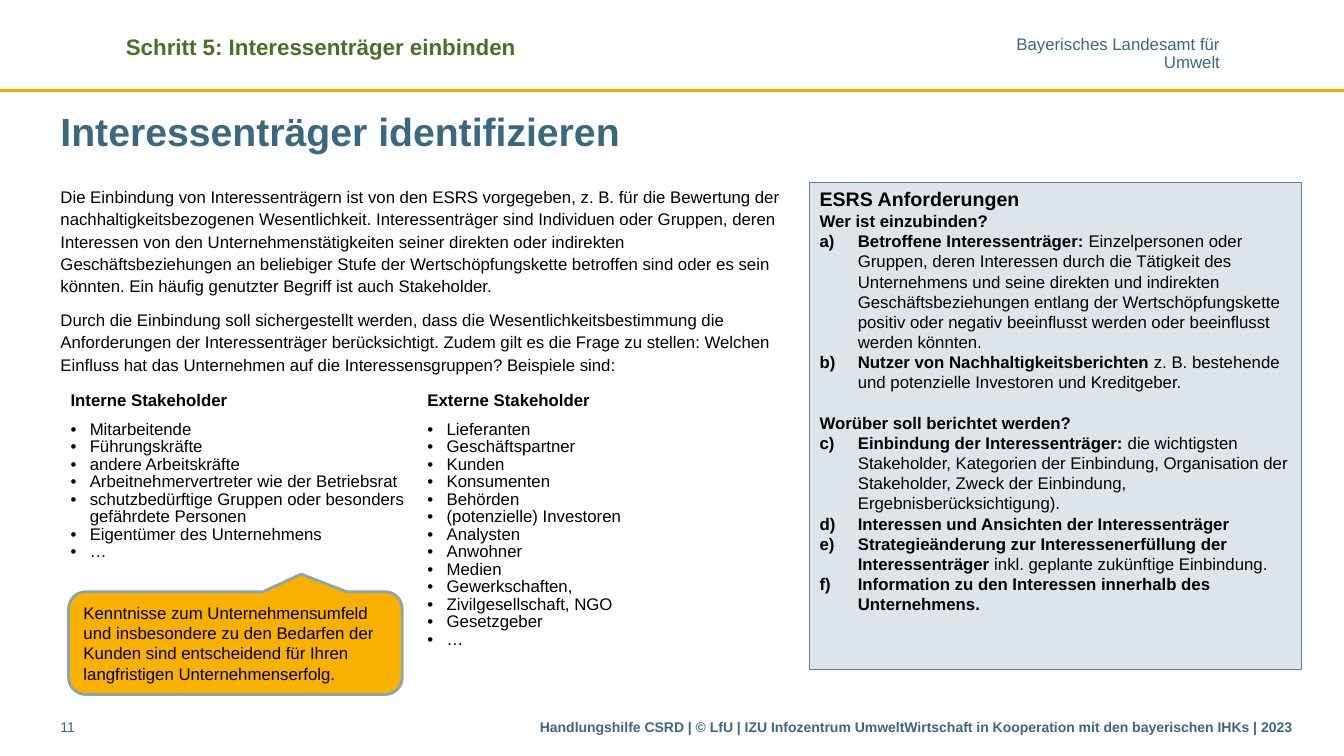
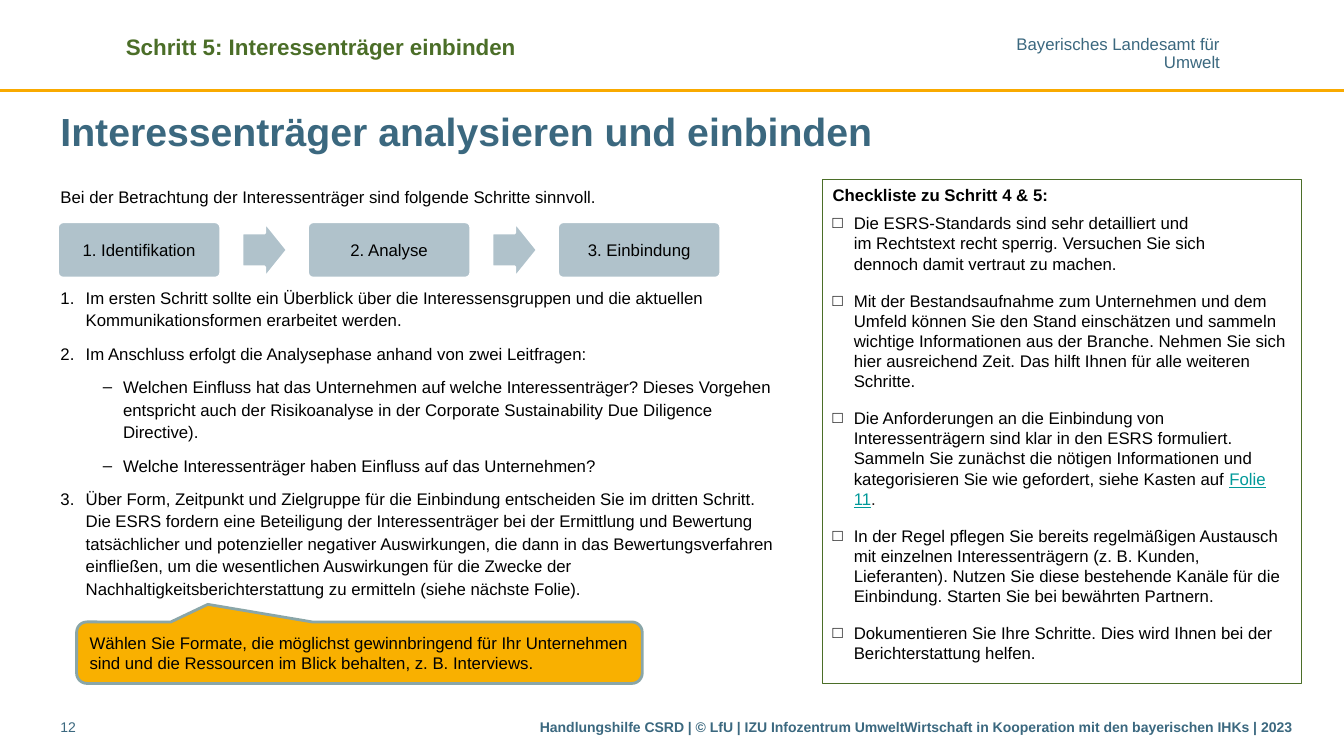
from lxml.etree import SubElement
from pptx import Presentation
from pptx.dml.color import RGBColor
from pptx.enum.shapes import MSO_CONNECTOR, MSO_SHAPE
from pptx.enum.text import MSO_ANCHOR, PP_ALIGN
from pptx.oxml.ns import qn
from pptx.util import Inches, Pt

# Shared look
FONT = "Arial"
BLACK, WHITE = "000000", "FFFFFF"
BLUE, GREEN, GOLD = "3B687F", "4B6E28", "F9AA00"
CALLOUT_FILL, CALLOUT_LINE = "F9B000", "8AA6A8"
PANEL_FILL, PANEL_LINE = "DEE5EA", "5C8395"
STEP_FILL, LINK = "B0C2CB", "009999"
SLIDE_WIDTH, SLIDE_HEIGHT = 13.33, 7.5
LEFT, RIGHT = 0.6, 12.91
FLUSH = (0, 0.05, 0, 0.05)
INSET = (0.1, 0.05, 0.1, 0.05)
BODY = {"line": Pt(16), "before": 8}

STEP_HEADING = "Schritt 5: Interessenträger einbinden"
AGENCY = ["Bayerisches Landesamt für", "Umwelt"]
FOOTER = ("Handlungshilfe CSRD | © LfU | IZU Infozentrum UmweltWirtschaft "
          "in Kooperation mit den bayerischen IHKs | 2023")

# Slide texts
INTRODUCTION = [
    "Die Einbindung von Interessenträgern ist von den ESRS vorgegeben, z. B. für die Bewertung "
    "der nachhaltigkeitsbezogenen Wesentlichkeit. Interessenträger sind Individuen oder Gruppen, "
    "deren Interessen von den Unternehmenstätigkeiten seiner direkten oder indirekten "
    "Geschäftsbeziehungen an beliebiger Stufe der Wertschöpfungskette betroffen sind oder es sein "
    "könnten. Ein häufig genutzter Begriff ist auch Stakeholder.",
    "Durch die Einbindung soll sichergestellt werden, dass die Wesentlichkeitsbestimmung die "
    "Anforderungen der Interessenträger berücksichtigt. Zudem gilt es die Frage zu stellen: "
    "Welchen Einfluss hat das Unternehmen auf die Interessensgruppen? Beispiele sind:",
]
STAKEHOLDERS = {
    "Interne Stakeholder": [
        "Mitarbeitende", "Führungskräfte", "andere Arbeitskräfte",
        "Arbeitnehmervertreter wie der Betriebsrat",
        "schutzbedürftige Gruppen oder besonders gefährdete Personen",
        "Eigentümer des Unternehmens", "…"],
    "Externe Stakeholder": [
        "Lieferanten", "Geschäftspartner", "Kunden", "Konsumenten", "Behörden",
        "(potenzielle) Investoren", "Analysten", "Anwohner", "Medien", "Gewerkschaften,",
        "Zivilgesellschaft, NGO", "Gesetzgeber", "…"],
}
# Question, number of its first answer, answers as (bold part, plain part)
REQUIREMENTS = [
    ("Wer ist einzubinden?", 1, [
        ("Betroffene Interessenträger: ",
         "Einzelpersonen oder Gruppen, deren Interessen durch die Tätigkeit des Unternehmens und "
         "seine direkten und indirekten Geschäftsbeziehungen entlang der Wertschöpfungskette "
         "positiv oder negativ beeinflusst werden oder beeinflusst werden könnten."),
        ("Nutzer von Nachhaltigkeitsberichten ",
         "z. B. bestehende und potenzielle Investoren und Kreditgeber.")]),
    ("Worüber soll berichtet werden?", 3, [
        ("Einbindung der Interessenträger: ",
         "die wichtigsten Stakeholder, Kategorien der Einbindung, Organisation der Stakeholder, "
         "Zweck der Einbindung, Ergebnisberücksichtigung)."),
        ("Interessen und Ansichten der Interessenträger", ""),
        ("Strategieänderung zur Interessenerfüllung der Interessenträger ",
         "inkl. geplante zukünftige Einbindung."),
        ("Information zu den Interessen innerhalb des Unternehmens.", "")]),
]
STEPS = ["1. Identifikation", "2. Analyse", "3. Einbindung"]
STEP_NOTES = [
    ("Im ersten Schritt sollte ein Überblick über die Interessensgruppen und die aktuellen "
     "Kommunikationsformen erarbeitet werden.", []),
    ("Im Anschluss erfolgt die Analysephase anhand von zwei Leitfragen:", [
        "Welchen Einfluss hat das Unternehmen auf welche Interessenträger? Dieses Vorgehen "
        "entspricht auch der Risikoanalyse in der Corporate Sustainability Due Diligence "
        "Directive).",
        "Welche Interessenträger haben Einfluss auf das Unternehmen?"]),
    ("Über Form, Zeitpunkt und Zielgruppe für die Einbindung entscheiden Sie im dritten Schritt. "
     "Die ESRS fordern eine Beteiligung der Interessenträger bei der Ermittlung und Bewertung "
     "tatsächlicher und potenzieller negativer Auswirkungen, die dann in das Bewertungsverfahren "
     "einfließen, um die wesentlichen Auswirkungen für die Zwecke der "
     "Nachhaltigkeitsberichterstattung zu ermitteln (siehe nächste Folie).", []),
]
CHECKLIST = [
    ["Die ESRS-Standards sind sehr detailliert und\nim Rechtstext recht sperrig. "
     "Versuchen Sie sich\ndennoch damit vertraut zu machen."],
    ["Mit der Bestandsaufnahme zum Unternehmen und dem Umfeld können Sie den Stand einschätzen "
     "und sammeln wichtige Informationen aus der Branche. Nehmen Sie sich hier ausreichend Zeit. "
     "Das hilft Ihnen für alle weiteren Schritte."],
    ["Die Anforderungen an die Einbindung von Interessenträgern sind klar in den ESRS formuliert. "
     "Sammeln Sie zunächst die nötigen Informationen und kategorisieren Sie wie gefordert, "
     "siehe Kasten auf ",
     ("Folie 11", {"color": LINK, "underline": True}), (".", {"color": "1E1713"})],
    ["In der Regel pflegen Sie bereits regelmäßigen Austausch mit einzelnen Interessenträgern "
     "(z. B. Kunden, Lieferanten). Nutzen Sie diese bestehende Kanäle für die Einbindung. "
     "Starten Sie bei bewährten Partnern."],
    ["Dokumentieren Sie Ihre Schritte. Dies wird Ihnen bei der Berichterstattung helfen."],
]


def rgb(value):
    return RGBColor.from_string(value)


# Text
def add_run(paragraph, text, size=12, color=BLACK, bold=False, underline=False):
    for index, part in enumerate(text.split("\n")):
        if index:
            paragraph.add_line_break()
        run = paragraph.add_run()
        run.text = part
        run.font.name = FONT
        run.font.size = Pt(size)
        run.font.bold = bold
        run.font.underline = underline
        run.font.color.rgb = rgb(color)


def set_bullet(paragraph, bullet, margin, hanging):
    """A bullet is a character, or a numbering scheme with its start."""
    properties = paragraph._p.get_or_add_pPr()
    properties.set("marL", str(Inches(margin)))
    properties.set("indent", str(-Inches(hanging)))
    SubElement(properties, qn("a:buFont"), typeface=FONT)
    if isinstance(bullet, tuple):
        scheme, start = bullet
        SubElement(properties, qn("a:buAutoNum"), type=scheme, startAt=str(start))
    else:
        SubElement(properties, qn("a:buChar"), char=bullet)


def add_paragraph(frame, *runs, bullet=None, margin=0.0, hanging=0.0, align=PP_ALIGN.LEFT,
                  line=None, before=0, after=0, **style):
    """Each run is a text, or a text with its own style."""
    paragraph = frame.paragraphs[0]
    is_first = not paragraph.runs
    if not is_first:
        paragraph = frame.add_paragraph()
    if bullet:
        set_bullet(paragraph, bullet, margin, hanging)
    paragraph.alignment = align
    paragraph.line_spacing = line
    paragraph.space_before = Pt(0 if is_first else before)
    paragraph.space_after = Pt(after)
    for run in runs:
        text, own_style = (run, {}) if isinstance(run, str) else run
        add_run(paragraph, text, **{**style, **own_style})


def set_frame(frame, insets, anchor):
    frame.word_wrap = True
    frame.vertical_anchor = anchor
    (frame.margin_left, frame.margin_top,
     frame.margin_right, frame.margin_bottom) = map(Inches, insets)
    return frame


def add_text(slide, box, insets=INSET, anchor=MSO_ANCHOR.TOP):
    shape = slide.shapes.add_textbox(*map(Inches, box))
    return set_frame(shape.text_frame, insets, anchor)


# Shapes
def add_shape(slide, kind, box, fill, line, width, adjustments=(), anchor=MSO_ANCHOR.MIDDLE):
    shape = slide.shapes.add_shape(kind, *map(Inches, box))
    shape.shadow.inherit = False
    for index, value in enumerate(adjustments):
        shape.adjustments[index] = value
    if fill:
        shape.fill.solid()
        shape.fill.fore_color.rgb = rgb(fill)
    else:
        shape.fill.background()
    shape.line.color.rgb = rgb(line)
    shape.line.width = Pt(width)
    return set_frame(shape.text_frame, INSET, anchor)


def add_callout(slide, box, tip, text):
    frame = add_shape(slide, MSO_SHAPE.ROUNDED_RECTANGULAR_CALLOUT, box,
                      CALLOUT_FILL, CALLOUT_LINE, 2, (*tip, 0.167))
    add_paragraph(frame, text)


def add_panel(slide, box, fill, line):
    return add_shape(slide, MSO_SHAPE.RECTANGLE, box, fill, line, 1, anchor=MSO_ANCHOR.TOP)


def add_base_slide(presentation, title, number):
    """Header band, title and footer."""
    slide = presentation.slides.add_slide(presentation.slide_layouts[6])
    rule = slide.shapes.add_connector(MSO_CONNECTOR.STRAIGHT, 0, Inches(0.9),
                                      Inches(SLIDE_WIDTH), Inches(0.9))
    rule.line.color.rgb = rgb(GOLD)
    rule.line.width = Pt(2)
    SubElement(rule._element.spPr, qn("a:effectLst"))

    agency = add_text(slide, (9.9, 0.37, 2.2, 0.34), insets=(0, 0, 0, 0))
    for name_line in AGENCY:
        add_paragraph(agency, name_line, color=BLUE, align=PP_ALIGN.RIGHT, line=0.85)
    add_paragraph(add_text(slide, (1.15, 0.28, 5.04, 0.37)), STEP_HEADING,
                  size=16, color=GREEN, bold=True)
    add_paragraph(add_text(slide, (LEFT, 1.02, RIGHT - LEFT, 0.55), FLUSH, MSO_ANCHOR.MIDDLE),
                  title, size=28, color=BLUE, bold=True)
    add_paragraph(add_text(slide, (LEFT, 7.08, 0.7, 0.31), FLUSH), str(number),
                  size=10, color=BLUE)
    add_paragraph(add_text(slide, (5.17, 7.08, RIGHT - 5.17, 0.31)), FOOTER,
                  size=10, color=BLUE, bold=True, align=PP_ALIGN.RIGHT)
    return slide


# Content parts
def add_stakeholder_table(slide):
    box = map(Inches, (LEFT, 3.83, 7.08, 3))
    table = slide.shapes.add_table(2, len(STAKEHOLDERS), *box).table
    for row, height in zip(table.rows, (0.3, 2.7)):
        row.height = Inches(height)
    for column, (heading, groups) in enumerate(STAKEHOLDERS.items()):
        heading_cell, group_cell = table.cell(0, column), table.cell(1, column)
        for cell in (heading_cell, group_cell):
            cell.fill.solid()
            cell.fill.fore_color.rgb = rgb(WHITE)
        add_paragraph(heading_cell.text_frame, heading, bold=True)
        for group in groups:
            add_paragraph(group_cell.text_frame, group, bullet="•",
                          margin=0.19, hanging=0.19, line=0.93)


def add_requirements(slide):
    frame = add_panel(slide, (8.03, 1.81, RIGHT - 8.03, 4.83), PANEL_FILL, PANEL_LINE)
    add_paragraph(frame, "ESRS Anforderungen", size=14, bold=True)
    for question, start, answers in REQUIREMENTS:
        add_paragraph(frame, question, bold=True, before=0 if start == 1 else 14.4)
        for label, detail in answers:
            runs = [(label, {"bold": True})] + ([detail] if detail else [])
            add_paragraph(frame, *runs, bullet=("alphaLcParenR", start),
                          margin=0.38, hanging=0.38)


def add_process(slide):
    top, height, pitch = 2.2, 0.56, 2.48
    for index, step in enumerate(STEPS):
        left = 0.57 + index * pitch
        frame = add_shape(slide, MSO_SHAPE.ROUNDED_RECTANGLE, (left, top, 1.62, height),
                          STEP_FILL, WHITE, 2, (0.1,))
        add_paragraph(frame, step, align=PP_ALIGN.CENTER)
        if index < len(STEPS) - 1:
            add_shape(slide, MSO_SHAPE.RIGHT_ARROW, (left + 1.83, top, 0.45, height),
                      STEP_FILL, WHITE, 2, (0.6, 0.5))


def add_step_notes(slide):
    frame = add_text(slide, (LEFT, 1.78, 7.09, 4.3), FLUSH)
    add_paragraph(frame, "Bei der Betrachtung der Interessenträger sind folgende Schritte sinnvoll.",
                  **BODY)
    for number, (note, questions) in enumerate(STEP_NOTES, 1):
        # The first note leaves room for the process row
        before = 56 if number == 1 else BODY["before"]
        add_paragraph(frame, note, bullet=("arabicPeriod", number), margin=0.25, hanging=0.25,
                      line=BODY["line"], before=before)
        for question in questions:
            add_paragraph(frame, question, bullet="–", margin=0.62, hanging=0.2, **BODY)


def add_checklist(slide):
    frame = add_panel(slide, (8.16, 1.78, RIGHT - 8.16, 5), None, GREEN)
    add_paragraph(frame, "Checkliste zu Schritt 4 & 5:", bold=True)
    for runs in CHECKLIST:
        add_paragraph(frame, *runs, bullet="□", margin=0.21, hanging=0.21, before=6, after=6)


# Slides
def build_identify_slide(presentation):
    slide = add_base_slide(presentation, "Interessenträger identifizieren", 11)
    frame = add_text(slide, (LEFT, 1.78, 7.24, 2.05), FLUSH)
    for text in INTRODUCTION:
        add_paragraph(frame, text, **BODY)
    add_requirements(slide)
    add_stakeholder_table(slide)
    add_callout(slide, (0.68, 5.87, 3.31, 1.02), (0.197, -0.671),
                "Kenntnisse zum Unternehmensumfeld und insbesondere zu den Bedarfen der Kunden "
                "sind entscheidend für Ihren langfristigen Unternehmenserfolg.")


def build_analyse_slide(presentation):
    slide = add_base_slide(presentation, "Interessenträger analysieren und einbinden", 12)
    add_step_notes(slide)
    add_process(slide)
    add_callout(slide, (0.76, 6.17, 5.61, 0.61), (-0.268, -0.786),
                "Wählen Sie Formate, die möglichst gewinnbringend für Ihr Unternehmen sind "
                "und die Ressourcen im Blick behalten, z. B. Interviews.")
    add_checklist(slide)


def main():
    presentation = Presentation()
    presentation.slide_width = Inches(SLIDE_WIDTH)
    presentation.slide_height = Inches(SLIDE_HEIGHT)
    build_identify_slide(presentation)
    build_analyse_slide(presentation)
    presentation.save("out.pptx")


if __name__ == "__main__":
    main()
